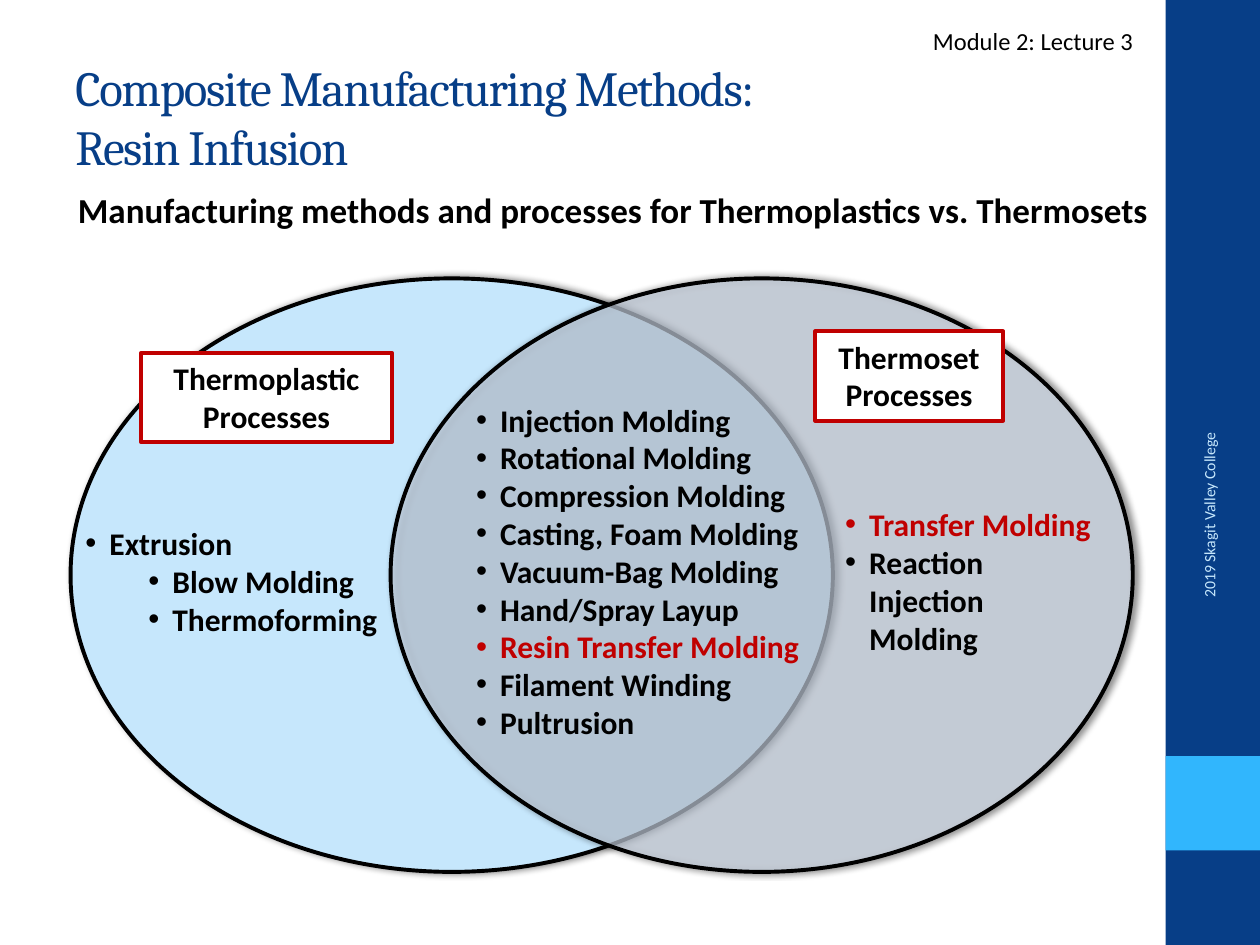
from lxml import etree
from pptx import Presentation
from pptx.dml.color import RGBColor
from pptx.enum.shapes import MSO_SHAPE
from pptx.enum.text import MSO_ANCHOR, PP_ALIGN
from pptx.oxml.ns import qn
from pptx.util import Inches, Pt

RECT, OVAL = MSO_SHAPE.RECTANGLE, MSO_SHAPE.OVAL
TOP, MIDDLE = MSO_ANCHOR.TOP, MSO_ANCHOR.MIDDLE
LEFT, CENTER, RIGHT = PP_ALIGN.LEFT, PP_ALIGN.CENTER, PP_ALIGN.RIGHT
COLORS = {"navy": "073E87", "sky": "31B6FD", "pale": "C6E7FC", "mist": "DAE6F6",
          "red": "C00000", "black": "000000", "white": "FFFFFF"}
RGB = {name: RGBColor.from_string(value) for name, value in COLORS.items()}

prs = Presentation()
prs.slide_width, prs.slide_height = Inches(10), Inches(7.5)
slide = prs.slides.add_slide(prs.slide_layouts[6])

# Grid of 100 columns by 75 rows
COL, ROW = prs.slide_width / 100, prs.slide_height / 75


def add_block(place, preset=None, fill=None, line=None):
    """Add a preset shape, or a text box when no preset is given."""
    left, top, width, height = place
    box = [int(n) for n in (left * COL, top * ROW, width * COL, height * ROW)]
    if preset is None:
        block = slide.shapes.add_textbox(*box)
    else:
        block = slide.shapes.add_shape(preset, *box)
        block.shadow.inherit = False
        block.fill.solid()
        block.fill.fore_color.rgb = RGB[fill]
        if line:
            block.line.color.rgb = RGB[line]
            block.line.width = Pt(2.25)
        else:
            block.line.fill.background()
    block.text_frame.word_wrap = True
    return block


def write(block, lines, size, font="Calibri", bold=False, align=LEFT,
          anchor=TOP, bullets=False):
    """Write (text, color, level) lines, one paragraph each."""
    frame = block.text_frame
    frame.vertical_anchor = anchor
    for i, (text, color, level) in enumerate(lines):
        para = frame.paragraphs[0] if i == 0 else frame.add_paragraph()
        para.alignment = align
        para.level = level
        if bullets:
            props = para._p.get_or_add_pPr()
            props.set("marL", str(Inches(0.19 + 0.5 * level)))
            props.set("indent", str(-Inches(0.19)))
            etree.SubElement(props, qn("a:buFont"), typeface="Arial")
            etree.SubElement(props, qn("a:buChar"), char="•")
        for j, part in enumerate(text.split("\n")):
            if j:
                para.add_line_break()
            run = para.add_run()
            run.text = part
            run.font.size, run.font.name, run.font.bold = Pt(size), font, bold
            run.font.color.rgb = RGB[color]


# Side band
add_block((92.5, 0, 7.5, 75), RECT, "navy")
add_block((92.5, 60, 7.5, 7.5), RECT, "sky")

# Overlapping ellipses with soft shadows
for place, fill, opacity in [((5.6, 22.1, 60.5, 47.1), "pale", None),
                             ((31, 22.1, 58.9, 47.1), "mist", 61)]:
    ellipse = add_block(place, OVAL, fill, "black")
    props = ellipse._element.spPr
    if opacity:
        tint = props.find(qn("a:solidFill")).find(qn("a:srgbClr"))
        etree.SubElement(tint, qn("a:alpha"), val=str(opacity * 1000))
    shadow = etree.SubElement(props.find(qn("a:effectLst")), qn("a:outerShdw"),
                              blurRad=str(Pt(4)), dist=str(Pt(2)), dir="0",
                              rotWithShape="0")
    shade = etree.SubElement(shadow, qn("a:srgbClr"), val=COLORS["black"])
    etree.SubElement(shade, qn("a:alpha"), val="60000")

# Process lists: shared, thermoplastic, thermoset
process_lists = [
    ((36.8, 31.3, 28.5, 30.3), [
        ("Injection Molding", "black", 0),
        ("Rotational Molding", "black", 0),
        ("Compression Molding", "black", 0),
        ("Casting, Foam Molding", "black", 0),
        ("Vacuum-Bag Molding", "black", 0),
        ("Hand/Spray Layup", "black", 0),
        ("Resin Transfer Molding", "red", 0),
        ("Filament Winding", "black", 0),
        ("Pultrusion", "black", 0)]),
    ((5.8, 41.1, 26.2, 10.1), [
        ("Extrusion", "black", 0),
        ("Blow Molding", "black", 1),
        ("Thermoforming", "black", 1)]),
    ((66.1, 39.6, 21.8, 15.8), [
        ("Transfer Molding", "red", 0),
        ("Reaction Injection Molding", "black", 0)]),
]
for place, processes in process_lists:
    write(add_block(place), processes, 18, bold=True, bullets=True)

# Ellipse labels
for place, label in [((11.2, 28, 19.9, 7.1), "Thermoplastic Processes"),
                     ((64.7, 26.3, 14.9, 7.1), "Thermoset Processes")]:
    write(add_block(place, RECT, "white", "red"), [(label, "black", 0)], 18,
          bold=True, align=CENTER)

# Title, with slightly tightened letters
title = add_block((5, 3, 83.3, 12.5))
write(title, [("Composite Manufacturing Methods:\nResin Infusion", "navy", 0)],
      28, font="Cambria", anchor=MIDDLE)
for run in title.text_frame.paragraphs[0].runs:
    run.font._element.set("spc", "-80")

# Subtitle
subtitle = add_block((5.2, 14.5, 89.7, 10.3))
write(subtitle, [("Manufacturing methods and processes for Thermoplastics vs. "
                  "Thermosets", "black", 0)], 20, bold=True)

# Module mark and side credit
write(add_block((70.3, 1.6, 23.4, 3.4)), [("Module 2: Lecture 3", "black", 0)],
      14, align=CENTER)
credit = add_block((83, 44.3, 25.9, 4))
credit.rotation = 270
write(credit, [("2019 Skagit Valley College", "pale", 0)], 9, align=RIGHT,
      anchor=MIDDLE)

prs.save("out.pptx")
